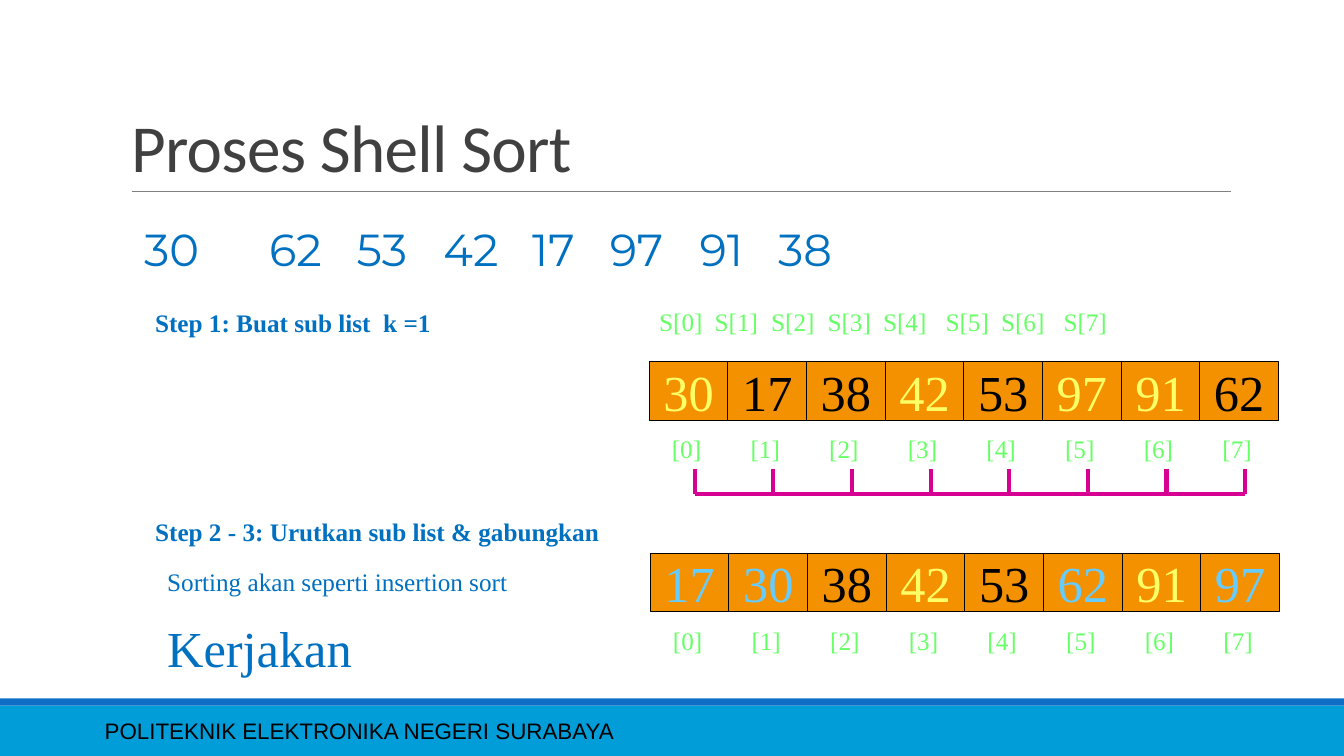
from itertools import pairwise

from lxml.etree import SubElement
from pptx import Presentation
from pptx.dml.color import RGBColor
from pptx.enum.shapes import MSO_CONNECTOR, MSO_SHAPE
from pptx.enum.text import MSO_ANCHOR as Anchor, MSO_AUTO_SIZE, PP_ALIGN as Align
from pptx.oxml.ns import qn
from pptx.util import Inches, Pt

COLORS = {
    "band": "009DD9", "stripe": "0F6FC6", "rule": "808080", "title": "404040",
    "text": "0070C0", "index": "66FF66", "cell": "F49100", "black": "000000",
    "yellow": "FFFF66", "sorted": "66CCFF", "bracket": "D60093",
}
SERIF = "Times New Roman"
CELL_WIDTH, CELL_HEIGHT = 0.78, 0.58
NUMBERS = [30, 62, 53, 42, 17, 97, 91, 38]
NUMBER_TABS = [1.24, 2.11, 2.97, 3.85, 4.62, 5.51, 6.29]
LABEL_TABS = [0.55, 1.11, 1.67, 2.22, 2.84, 3.39, 4.01]
SUBLIST = [(30, "yellow"), (17, "black"), (38, "black"), (42, "yellow"),
           (53, "black"), (97, "yellow"), (91, "yellow"), (62, "black")]
MERGED = [(17, "sorted"), (30, "sorted"), (38, "black"), (42, "yellow"),
          (53, "black"), (62, "sorted"), (91, "yellow"), (97, "sorted")]


def rgb(name):
    return RGBColor.from_string(COLORS[name])


def write(shape, text, size=18, color="text", font=SERIF, bold=False,
          align=Align.LEFT, anchor=Anchor.TOP, wrap=False, tabs=()):
    """Fill a shape with one formatted paragraph; tabs are stops in inches."""
    frame = shape.text_frame
    frame.word_wrap = wrap
    frame.auto_size = MSO_AUTO_SIZE.NONE
    frame.vertical_anchor = anchor
    paragraph = frame.paragraphs[0]
    paragraph.alignment = align
    if tabs:
        stops = SubElement(paragraph._p.get_or_add_pPr(), qn("a:tabLst"))
        for stop in tabs:
            SubElement(stops, qn("a:tab"), pos=str(Inches(stop)), algn="l")
    run = paragraph.add_run()
    run.text = text
    run.font.size = Pt(size)
    run.font.name = font
    run.font.bold = bold
    run.font.color.rgb = rgb(color)
    return paragraph


def add_text(slide, text, left, top, width, height=0.4, **style):
    box = slide.shapes.add_textbox(
        Inches(left), Inches(top), Inches(width), Inches(height))
    write(box, text, **style)


def add_box(slide, left, top, width, height, fill, outline=None):
    box = slide.shapes.add_shape(
        MSO_SHAPE.RECTANGLE, Inches(left), Inches(top), Inches(width), Inches(height))
    box.shadow.inherit = False
    box.fill.solid()
    box.fill.fore_color.rgb = rgb(fill)
    if outline:
        box.line.color.rgb = rgb(outline)
        box.line.width = Pt(0.75)
    else:
        box.line.fill.background()
    return box


def add_line(slide, x1, y1, x2, y2, color, width):
    line = slide.shapes.add_connector(
        MSO_CONNECTOR.STRAIGHT, Inches(x1), Inches(y1), Inches(x2), Inches(y2))
    line.line.color.rgb = rgb(color)
    line.line.width = Pt(width)
    SubElement(line._element.spPr, qn("a:effectLst"))


def add_array(slide, values, left, top):
    """Draw a row of cells with an index under each."""
    for i, (value, color) in enumerate(values):
        x = left + i * CELL_WIDTH
        cell = add_box(slide, x, top, CELL_WIDTH, CELL_HEIGHT, "cell", "black")
        write(cell, str(value), size=36, color=color,
              align=Align.CENTER, anchor=Anchor.MIDDLE)
        add_text(slide, f"[{i}]", x + 0.12, top + 0.66, 0.5,
                 color="index", align=Align.CENTER)


def add_bracket(slide, left, top, bottom, count):
    """Draw a tick for each cell and join neighbouring ticks."""
    ticks = [left + i * CELL_WIDTH for i in range(count)]
    for x in ticks:
        add_line(slide, x, top, x, bottom, "bracket", 3)
    for start, end in pairwise(ticks):
        add_line(slide, start, bottom, end, bottom, "bracket", 3)


def add_title(slide, text):
    title = slide.shapes.title
    title.left, title.top = Inches(1.2), Inches(0.31)
    title.width, title.height = Inches(11), Inches(1.59)
    paragraph = write(title, text, size=48, color="title", font="Calibri",
                      anchor=Anchor.BOTTOM, wrap=True)
    paragraph.line_spacing = 0.85
    paragraph.runs[0].font._element.set("spc", "-50")


def main():
    deck = Presentation()
    deck.slide_width, deck.slide_height = Inches(13.33), Inches(7.5)
    slide = deck.slides.add_slide(deck.slide_layouts[5])

    add_box(slide, 0, 7, 13.33, 0.5, "band")
    add_box(slide, 0, 6.93, 13.33, 0.07, "stripe")
    add_line(slide, 1.31, 1.9, 12.21, 1.9, "rule", 0.5)
    add_text(slide, "POLITEKNIK ELEKTRONIKA NEGERI SURABAYA", 0.94, 7.05, 8.41,
             size=16, color="black", font="Arial", anchor=Anchor.MIDDLE, wrap=True)

    add_title(slide, "Proses Shell Sort")
    add_text(slide, "\t".join(map(str, NUMBERS)), 1.33, 2.15, 8.39, 0.64,
             size=32, font="Montserrat", wrap=True, tabs=NUMBER_TABS)

    add_text(slide, "Step 1: Buat sub list  k =1", 1.44, 3, 2.96, bold=True)
    add_text(slide, "\t".join(f"S[{i}]" for i in range(len(SUBLIST))),
             6.44, 2.99, 6.44, color="index", wrap=True, tabs=LABEL_TABS)
    add_array(slide, SUBLIST, 6.44, 3.59)
    add_bracket(slide, 6.89, 4.65, 4.9, len(SUBLIST))

    add_text(slide, "Step 2 - 3: Urutkan sub list & gabungkan", 1.44, 5.07, 4.65,
             bold=True)
    add_text(slide, "Sorting akan seperti insertion sort", 1.56, 5.57, 3.61)
    add_text(slide, "Kerjakan", 1.56, 6.07, 2.05, 0.71, size=36)
    add_array(slide, MERGED, 6.45, 5.49)

    deck.save("out.pptx")


if __name__ == "__main__":
    main()
